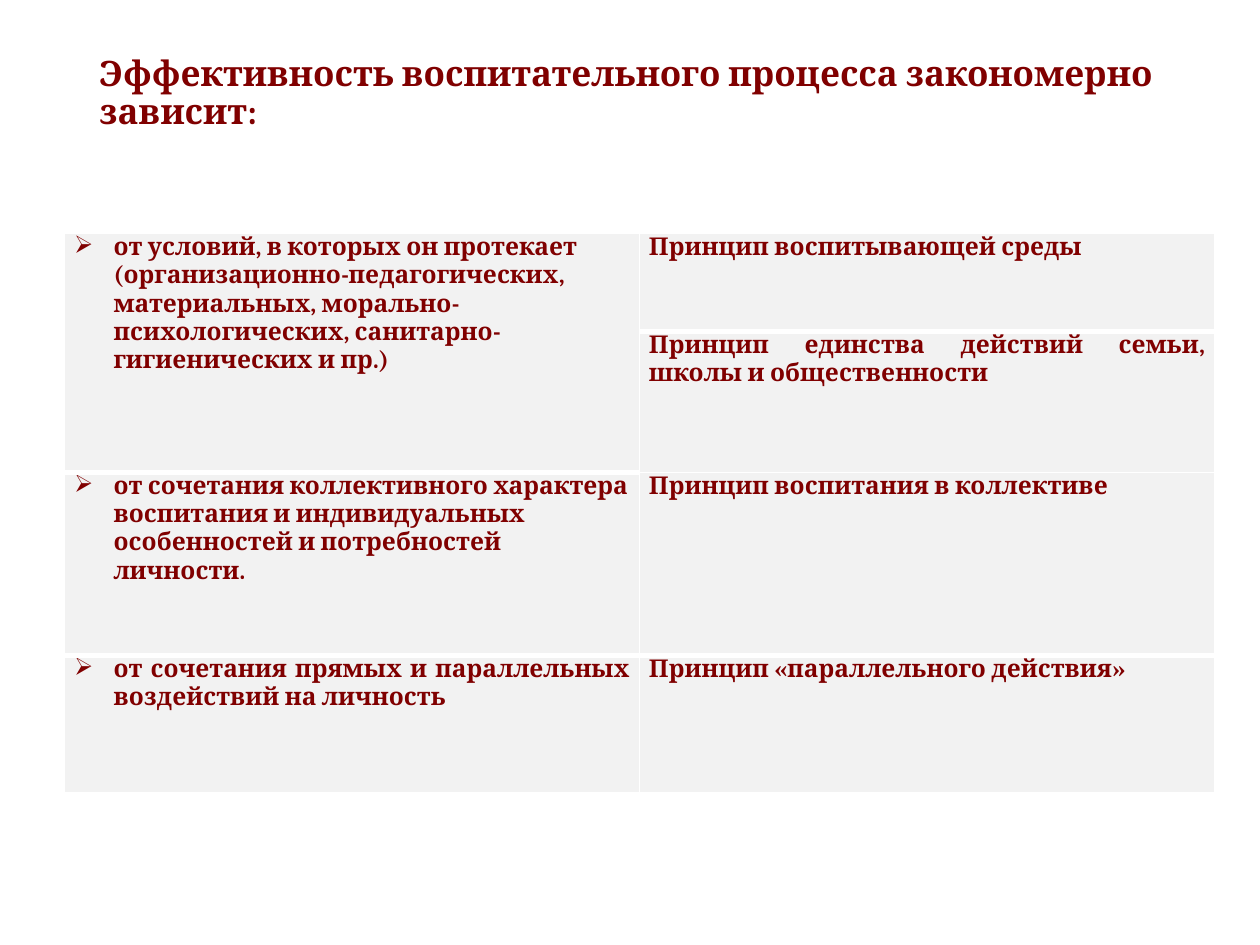
import pptx
import pptx.enum.text
import pptx.dml.color
import pptx.oxml.ns
import pptx.util
from lxml import etree

Pt = pptx.util.Pt
qn = pptx.oxml.ns.qn
ALIGN = pptx.enum.text.PP_ALIGN
ANCHOR = pptx.enum.text.MSO_ANCHOR

COLORS = {"text": "800000", "cell": "F2F2F2", "border": "FFFFFF"}
COLUMN_WIDTH = 328.5
ROW_HEIGHTS = [56, 80.5, 104.5, 78.5]
INDENT = 22.5
THIN, THICK = 1, 3

TITLE = "Эффективность воспитательного процесса закономерно зависит:"
# row, text, alignment
CONDITIONS = [
    (0, "от условий, в которых он протекает (организационно-педагогических, "
        "материальных, морально-психологических, санитарно-гигиенических и пр.)",
     ALIGN.LEFT),
    (2, "от сочетания коллективного характера воспитания и индивидуальных "
        "особенностей и потребностей личности.", ALIGN.LEFT),
    (3, "от сочетания прямых и параллельных воздействий на личность", ALIGN.JUSTIFY),
]
PRINCIPLES = [
    "Принцип воспитывающей среды",
    "Принцип единства действий семьи, школы и общественности",
    "Принцип воспитания в коллективе",
    "Принцип «параллельного действия»",
]


def rgb(name):
    return pptx.dml.color.RGBColor.from_string(COLORS[name])


def set_attributes(target, values):
    for name, value in values.items():
        setattr(target, name, value)


def write(frame, text, size, alignment):
    paragraph = frame.paragraphs[0]
    paragraph.alignment = alignment
    run = paragraph.add_run()
    run.text = text
    set_attributes(run.font, {"name": "Cambria", "size": Pt(size), "bold": True})
    run.font.color.rgb = rgb("text")
    return paragraph


def add_bullet(paragraph):
    properties = paragraph._p.get_or_add_pPr()
    properties.set("marL", str(Pt(INDENT)))
    properties.set("indent", str(-Pt(INDENT)))
    etree.SubElement(properties, qn("a:buChar")).set("char", "➢")


def add_borders(cell, top, bottom):
    properties = cell._tc.get_or_add_tcPr()
    for side, width in {"L": THIN, "R": THIN, "T": top, "B": bottom}.items():
        line = etree.SubElement(properties, qn(f"a:ln{side}"), w=str(Pt(width)))
        fill = etree.SubElement(line, qn("a:solidFill"))
        etree.SubElement(fill, qn("a:srgbClr"), val=COLORS["border"])


def format_cell(cell, top, bottom):
    add_borders(cell, top, bottom)
    cell.fill.solid()
    cell.fill.fore_color.rgb = rgb("cell")
    set_attributes(cell, {"margin_left": Pt(5.4), "margin_right": Pt(5.4),
                          "margin_top": 0, "margin_bottom": 0,
                          "vertical_anchor": ANCHOR.TOP})


def add_title(slide):
    title = slide.shapes.title
    set_attributes(title, {"left": Pt(49.5), "top": Pt(28.5),
                           "width": Pt(638), "height": Pt(50.5)})
    set_attributes(title.text_frame, {"word_wrap": True,
                                      "vertical_anchor": ANCHOR.MIDDLE})
    write(title.text_frame, TITLE, 20, ALIGN.LEFT).line_spacing = 0.9


def add_principles_table(slide):
    table = slide.shapes.add_table(
        len(ROW_HEIGHTS), 2, Pt(37), Pt(133.5),
        Pt(2 * COLUMN_WIDTH), Pt(sum(ROW_HEIGHTS))).table
    set_attributes(table, {"first_row": False, "horz_banding": False})
    for column in table.columns:
        column.width = Pt(COLUMN_WIDTH)
    for row, height in zip(table.rows, ROW_HEIGHTS):
        row.height = Pt(height)

    # Thick rules follow the groups on the left and the two outer rows on the right
    thick_below = [{1, 2}, {0, 2}]
    for row in range(len(ROW_HEIGHTS)):
        for column, thick_rows in enumerate(thick_below):
            format_cell(table.cell(row, column),
                        THICK if row - 1 in thick_rows else THIN,
                        THICK if row in thick_rows or (row, column) == (0, 0) else THIN)
    table.cell(0, 0).merge(table.cell(1, 0))

    for row, text, alignment in CONDITIONS:
        add_bullet(write(table.cell(row, 0).text_frame, text, 14, alignment))
    for row, text in enumerate(PRINCIPLES):
        write(table.cell(row, 1).text_frame, text, 14, ALIGN.JUSTIFY)


def main():
    presentation = pptx.Presentation()
    set_attributes(presentation, {"slide_width": Pt(720), "slide_height": Pt(540)})
    slide = presentation.slides.add_slide(presentation.slide_layouts[5])
    add_title(slide)
    add_principles_table(slide)
    presentation.save("out.pptx")


if __name__ == "__main__":
    main()
